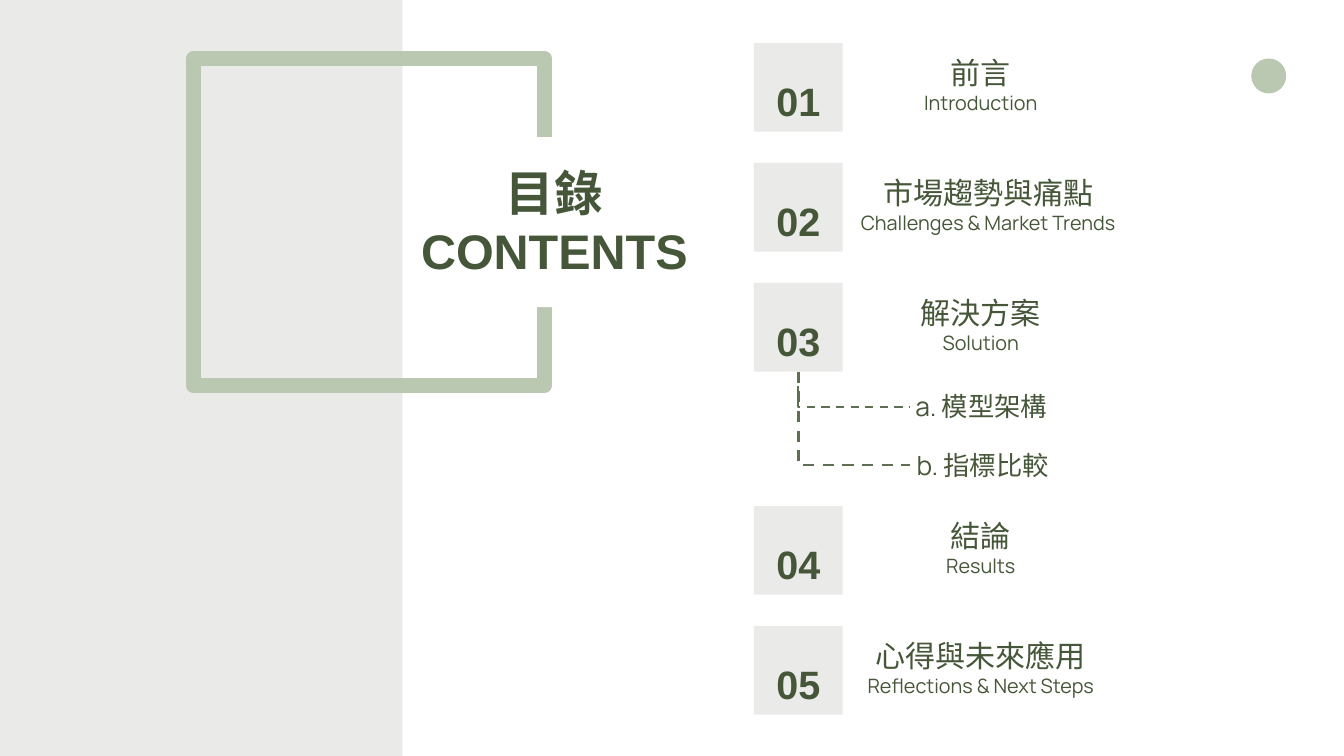
from lxml import etree
from pptx import Presentation
from pptx import util as u
from pptx.dml.color import RGBColor
from pptx.enum import dml, shapes, text
from pptx.oxml.ns import qn

INK, SAGE, GREY, WHITE, MOSS = "465739", "BBC8B1", "EAEBE9", "FFFFFF", "5F6F52"
RECT = shapes.MSO_SHAPE.RECTANGLE
OVAL = shapes.MSO_SHAPE.OVAL
LEFT, MID = text.PP_ALIGN.LEFT, text.PP_ALIGN.CENTER

TILE_X, TILE = 11.22, 1.32
FIRST_Y, STEP, SUB_GAP = 0.64, 1.785, 1.535
ROWS = [
    ("前言", "Introduction", 4.11),
    ("市場趨勢與痛點", "Challenges & Market Trends", 4.33),
    ("解決方案", "Solution", 4.11),
    ("結論", "Results", 4.11),
    ("心得與未來應用", "Reflections & Next Steps", 4.11),
]
SUBS = [  # text, top, width, inset, branch y, branch weight
    ("a. 模型架構", 5.73, 2.71, 0.08, 6.06, 2.25),
    ("b. 指標比較", 6.58, 3.48, 0.1, 6.92, 3),
]
SUB_X = 13.54


def color(code):
    return RGBColor.from_string(code)


def add_block(slide, kind, box, fill=None, line=None, weight=0):
    block = slide.shapes.add_shape(kind, *map(u.Inches, box))
    block.shadow.inherit = False
    if fill:
        block.fill.solid()
        block.fill.fore_color.rgb = color(fill)
    else:
        block.fill.background()
    if line:
        block.line.color.rgb = color(line)
        block.line.width = u.Pt(weight)
    else:
        block.line.fill.background()


def set_text(frame, lines, font, inset, align=MID, bold=False,
             anchor=text.MSO_ANCHOR.TOP, space=None):
    """Fill the frame with one paragraph for each (words, size) pair."""
    frame.word_wrap = True
    frame.auto_size = text.MSO_AUTO_SIZE.NONE
    frame.vertical_anchor = anchor
    frame.margin_left = frame.margin_right = u.Inches(inset)
    frame.margin_top = frame.margin_bottom = u.Inches(inset)
    frame.text = "\n".join(words for words, size in lines)
    for para, (words, size) in zip(frame.paragraphs, lines):
        para.alignment = align
        if space:
            para.line_spacing = space
        face = para.runs[0].font
        face.name, face.size, face.bold = font, u.Pt(size), bold
        face.color.rgb = color(INK)


def add_text(slide, box, lines, font, inset, **style):
    label = slide.shapes.add_textbox(*map(u.Inches, box))
    set_text(label.text_frame, lines, font, inset, **style)


def add_title(slide):
    title = slide.shapes.title
    title.left, title.top = u.Inches(5.9), u.Inches(2.32)
    title.width, title.height = u.Inches(4.7), u.Inches(1.95)
    set_text(title.text_frame, [("目錄", 52), ("CONTENTS", 52)], "Arial", 0.1,
             bold=True)
    slide.shapes.element.append(title.element)  # in front of the frame


def add_row(slide, num, top, name, note, width):
    add_block(slide, RECT, (TILE_X, top, TILE, TILE), GREY)
    add_text(slide, (TILE_X, top - 0.08, TILE, 1.4), [(f"{num:02}", 42.4)],
             "Arial", 0.02, bold=True, anchor=text.MSO_ANCHOR.MIDDLE, space=1.67)
    add_text(slide, (TILE_X + TILE, top + 0.09, width, 1.07),
             [(name, 32.2), (note, 21.2)], "Manrope", 0.08)


def add_branch(slide, x, y, end_x, end_y, weight):
    """Draw a dashed elbow that runs down first and then right."""
    wide, high = end_x - x, end_y - y
    mid_x, mid_y = x + wide / 2, y + high / 2
    # The box is upright before its turn, so its sides are swapped.
    ends = (mid_x + high / 2, mid_y - wide / 2, mid_x - high / 2, mid_y + wide / 2)
    link = slide.shapes.add_connector(shapes.MSO_CONNECTOR.ELBOW,
                                      *map(u.Inches, ends))
    link.line.color.rgb = color(MOSS)
    link.line.width = u.Pt(weight)
    link.line.dash_style = dml.MSO_LINE.DASH
    props = link.element.spPr
    props.find(qn("a:xfrm")).set("rot", str(270 * 60000))
    props.find(qn("a:prstGeom")).set("prst", "bentConnector2")
    etree.SubElement(props, qn("a:effectLst"))


def main():
    deck = Presentation()
    deck.slide_width, deck.slide_height = u.Inches(20), u.Inches(11.25)
    slide = deck.slides.add_slide(deck.slide_layouts[5])

    add_block(slide, RECT, (-2.27, -0.69, 8.26, 12.83), GREY)
    add_block(slide, OVAL, (18.62, 0.87, 0.52, 0.52), SAGE)
    add_block(slide, RECT, (2.88, 0.87, 5.22, 4.87), line=SAGE, weight=15.92)
    add_block(slide, RECT, (6.64, 2.04, 2.98, 2.53), WHITE)
    add_title(slide)

    for i, row in enumerate(ROWS):
        top = FIRST_Y + i * STEP + (SUB_GAP if i > 2 else 0)
        add_row(slide, i + 1, top, *row)

    stem_x, stem_y = TILE_X + TILE / 2, FIRST_Y + 2 * STEP + TILE
    for words, top, width, inset, end_y, weight in SUBS:
        add_text(slide, (SUB_X, top, width, 0.67), [(words, 28.2)], "Manrope",
                 inset, align=LEFT)
        add_branch(slide, stem_x, stem_y, SUB_X, end_y, weight)

    deck.save("out.pptx")


if __name__ == "__main__":
    main()
